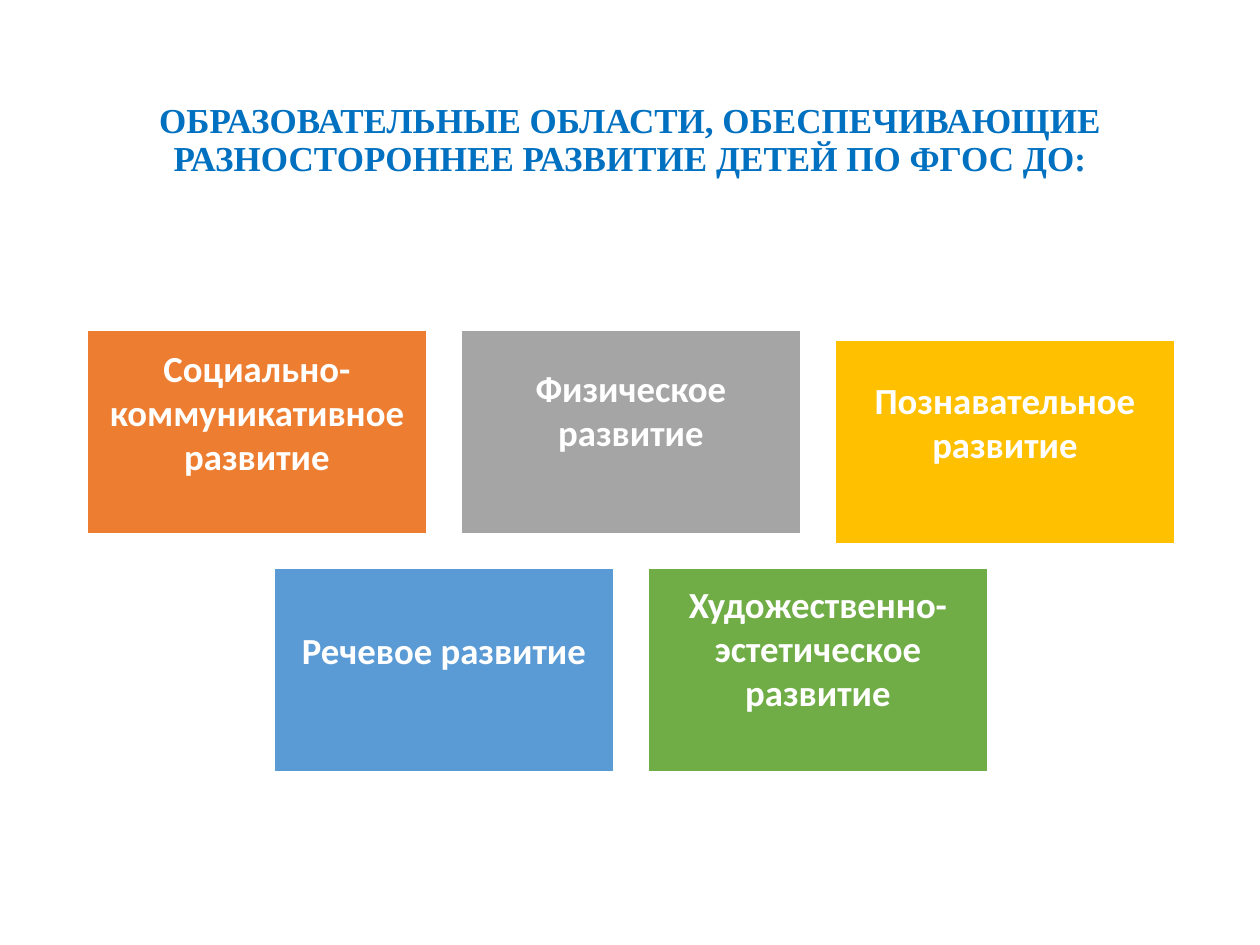
from dataclasses import dataclass

from pptx import Presentation
from pptx import util as u
from pptx.dml.color import RGBColor
from pptx.enum import shapes, text

PX = 914400 / 126
COLORS = {
    "title": "0070C0",
    "white": "FFFFFF",
    "orange": "ED7D31",
    "gray": "A5A5A5",
    "gold": "FFC000",
    "blue": "5B9BD5",
    "green": "70AD47",
}
LEFT, TOP = 87, 330
WIDTH, HEIGHT, GAP = 340, 204, 34
INSET = 11


@dataclass
class Area:
    row: int
    column: int
    color: str
    lines: list[str]
    lift: int = 40
    drop: int = 0


AREAS = [
    Area(0, 0, "orange", ["Социально-коммуникативное", "развитие"]),
    Area(0, 1, "gray", ["Физическое развитие"], lift=44),
    Area(0, 2, "gold", ["Познавательное", "развитие"], drop=10),
    Area(1, 0, "blue", ["Речевое развитие"]),
    Area(1, 1, "green", ["Художественно- эстетическое", "развитие"], lift=44),
]


def px(n: float) -> int:
    return round(n * PX)


def rgb(name: str) -> RGBColor:
    return RGBColor.from_string(COLORS[name])


def style(p, font: str, size: int, color: str) -> None:
    p.alignment = text.PP_ALIGN.CENTER
    p.font.name = font
    p.font.size = u.Pt(size)
    p.font.bold = True
    p.font.color.rgb = rgb(color)


def draw_title(s) -> None:
    sp = s.shapes.title
    sp.left, sp.top, sp.width, sp.height = map(px, (87, 50, 1086, 183))
    tf = sp.text_frame
    tf.auto_size = text.MSO_AUTO_SIZE.NONE
    tf.vertical_anchor = text.MSO_ANCHOR.MIDDLE
    p = tf.paragraphs[0]
    p.text = (
        "ОБРАЗОВАТЕЛЬНЫЕ ОБЛАСТИ, ОБЕСПЕЧИВАЮЩИЕ\v"
        "РАЗНОСТОРОННЕЕ РАЗВИТИЕ ДЕТЕЙ ПО ФГОС ДО:"
    )
    p.line_spacing = 0.9
    style(p, "Times New Roman", 20, "title")


def draw_area(s, area: Area) -> None:
    pitch = WIDTH + GAP
    left = LEFT + area.column * pitch + area.row * pitch // 2
    top = TOP + area.row * (HEIGHT + GAP) + area.drop
    sp = s.shapes.add_shape(
        shapes.MSO_SHAPE.RECTANGLE, px(left), px(top), px(WIDTH), px(HEIGHT)
    )
    sp.shadow.inherit = False
    sp.fill.solid()
    sp.fill.fore_color.rgb = rgb(area.color)
    sp.line.color.rgb = rgb("white")
    sp.line.width = u.Pt(1)
    tf = sp.text_frame
    tf.word_wrap = True
    tf.vertical_anchor = text.MSO_ANCHOR.MIDDLE
    tf.margin_left = tf.margin_right = tf.margin_top = px(INSET)
    tf.margin_bottom = px(INSET + area.lift)
    tf.text = "\n".join(area.lines)
    for p in tf.paragraphs:
        style(p, "Calibri", 21, "white")


def main() -> None:
    prs = Presentation()
    prs.slide_width, prs.slide_height = px(1260), px(945)
    s = prs.slides.add_slide(prs.slide_layouts[5])
    draw_title(s)
    for area in AREAS:
        draw_area(s, area)
    prs.save("out.pptx")


if __name__ == "__main__":
    main()
